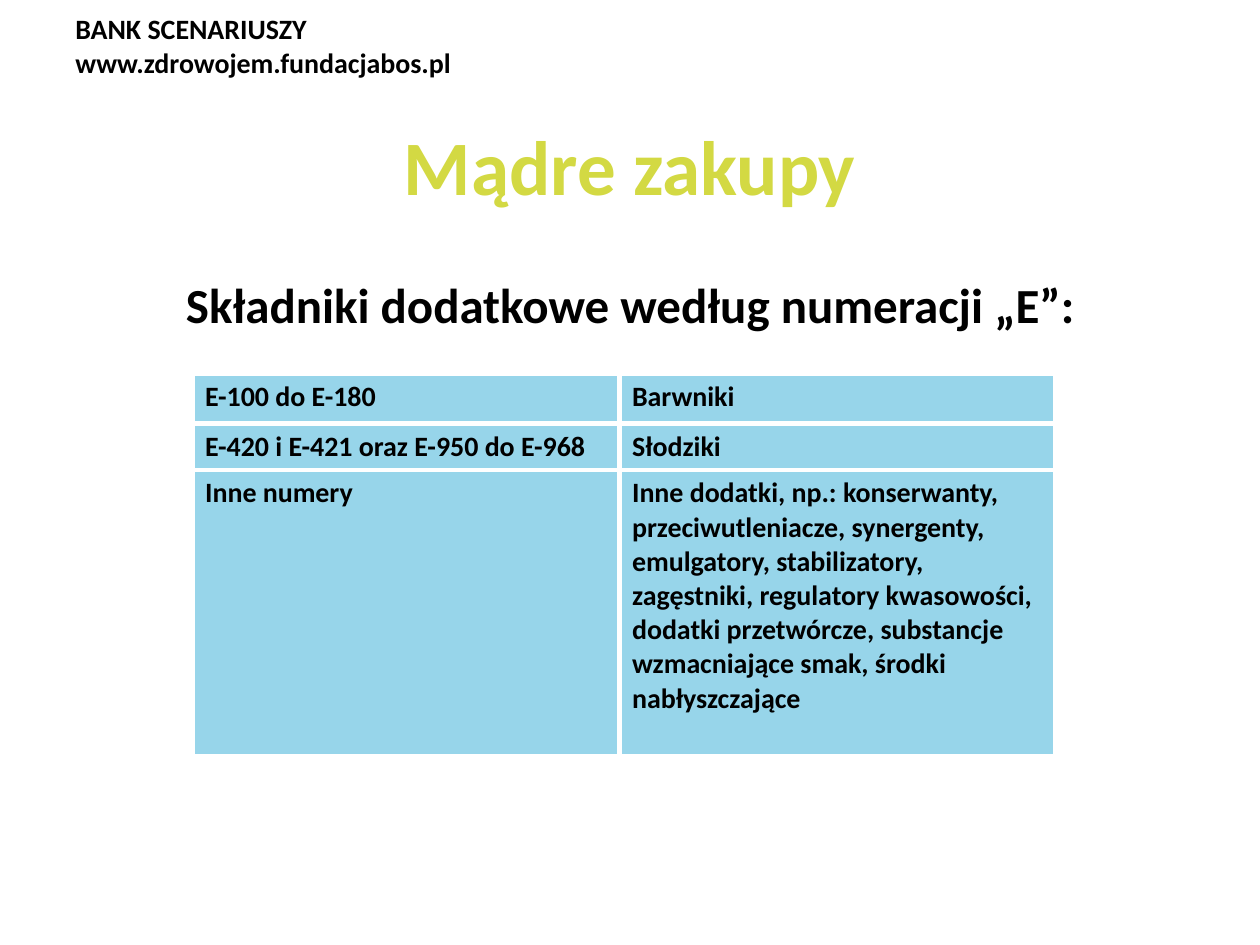
from dataclasses import dataclass

from lxml.etree import SubElement
from pptx import Presentation
from pptx.dml.color import RGBColor
from pptx.enum.text import MSO_ANCHOR, MSO_AUTO_SIZE, PP_ALIGN
from pptx.oxml.ns import qn
from pptx.util import Pt


@dataclass(frozen=True)
class Theme:
    font: str = "Calibri"
    text: str = "000000"
    title: str = "D3D943"
    cell: str = "97D5EA"
    border: str = "FFFFFF"
    border_width: float = 3
    small_size: float = 16
    body_size: float = 28
    title_size: float = 44


THEME = Theme()

HEADER = ["BANK SCENARIUSZY", "www.zdrowojem.fundacjabos.pl"]
ROWS = [
    ("E-100 do E-180", "Barwniki"),
    ("E-420 i E-421 oraz E-950 do E-968", "Słodziki"),
    ("Inne numery",
     "Inne dodatki, np.: konserwanty, przeciwutleniacze, synergenty, "
     "emulgatory, stabilizatory, zagęstniki, regulatory kwasowości, "
     "dodatki przetwórcze, substancje wzmacniające smak, środki "
     "nabłyszczające"),
]
COLUMN_WIDTHS = [244, 249]
ROW_HEIGHTS = [28.5, 26.5, 164]


def add_run(paragraph, text, size, color=THEME.text):
    run = paragraph.add_run()
    run.text = text
    run.font.name = THEME.font
    run.font.size = Pt(size)
    run.font.bold = True
    run.font.color.rgb = RGBColor.from_string(color)


def add_header(slide, lines):
    shape = slide.shapes.add_textbox(Pt(36), Pt(3), Pt(272), Pt(46))
    frame = shape.text_frame
    frame.word_wrap = True
    for index, line in enumerate(lines):
        paragraph = frame.add_paragraph() if index else frame.paragraphs[0]
        add_run(paragraph, line, THEME.small_size)


def fill_placeholder(shape, box, anchor, text, size, color):
    shape.left, shape.top, shape.width, shape.height = map(Pt, box)
    frame = shape.text_frame
    frame.auto_size = MSO_AUTO_SIZE.NONE
    frame.vertical_anchor = anchor
    paragraph = frame.paragraphs[0]
    paragraph.alignment = PP_ALIGN.CENTER
    paragraph.space_before = Pt(0)
    add_run(paragraph, text, size, color)
    return paragraph


def remove_bullet(paragraph):
    properties = paragraph._p.get_or_add_pPr()
    properties.set("marL", "0")
    properties.set("indent", "0")
    SubElement(properties, qn("a:buNone"))


def style_cell(cell):
    properties = cell._tc.get_or_add_tcPr()
    # Borders come before the fill in the cell properties
    for side in ("lnL", "lnR", "lnT", "lnB"):
        line = SubElement(properties, qn(f"a:{side}"),
                          w=str(Pt(THEME.border_width)))
        fill = SubElement(line, qn("a:solidFill"))
        SubElement(fill, qn("a:srgbClr"), val=THEME.border)
    cell.fill.solid()
    cell.fill.fore_color.rgb = RGBColor.from_string(THEME.cell)


def add_additives_table(slide, rows):
    frame = slide.shapes.add_table(
        len(rows), len(COLUMN_WIDTHS), Pt(110), Pt(213.5),
        Pt(sum(COLUMN_WIDTHS)), Pt(sum(ROW_HEIGHTS)))
    table = frame.table
    table.first_row = table.horz_banding = False
    for column, width in zip(table.columns, COLUMN_WIDTHS):
        column.width = Pt(width)
    for row, height, texts in zip(table.rows, ROW_HEIGHTS, rows):
        row.height = Pt(height)
        for cell, text in zip(row.cells, texts):
            style_cell(cell)
            add_run(cell.text_frame.paragraphs[0], text, THEME.small_size)


def main():
    presentation = Presentation()
    presentation.slide_width, presentation.slide_height = Pt(720), Pt(540)
    slide = presentation.slides.add_slide(presentation.slide_layouts[1])

    # Header
    add_header(slide, HEADER)

    # Title and subheading
    fill_placeholder(slide.shapes.title, (36, 49, 648, 90), MSO_ANCHOR.MIDDLE,
                     "Mądre zakupy", THEME.title_size, THEME.title)
    subheading = fill_placeholder(
        slide.placeholders[1], (36, 153.5, 648, 356.5), MSO_ANCHOR.TOP,
        "Składniki dodatkowe według numeracji „E”:",
        THEME.body_size, THEME.text)
    remove_bullet(subheading)

    # Table of additives
    add_additives_table(slide, ROWS)

    presentation.save("out.pptx")


if __name__ == "__main__":
    main()
